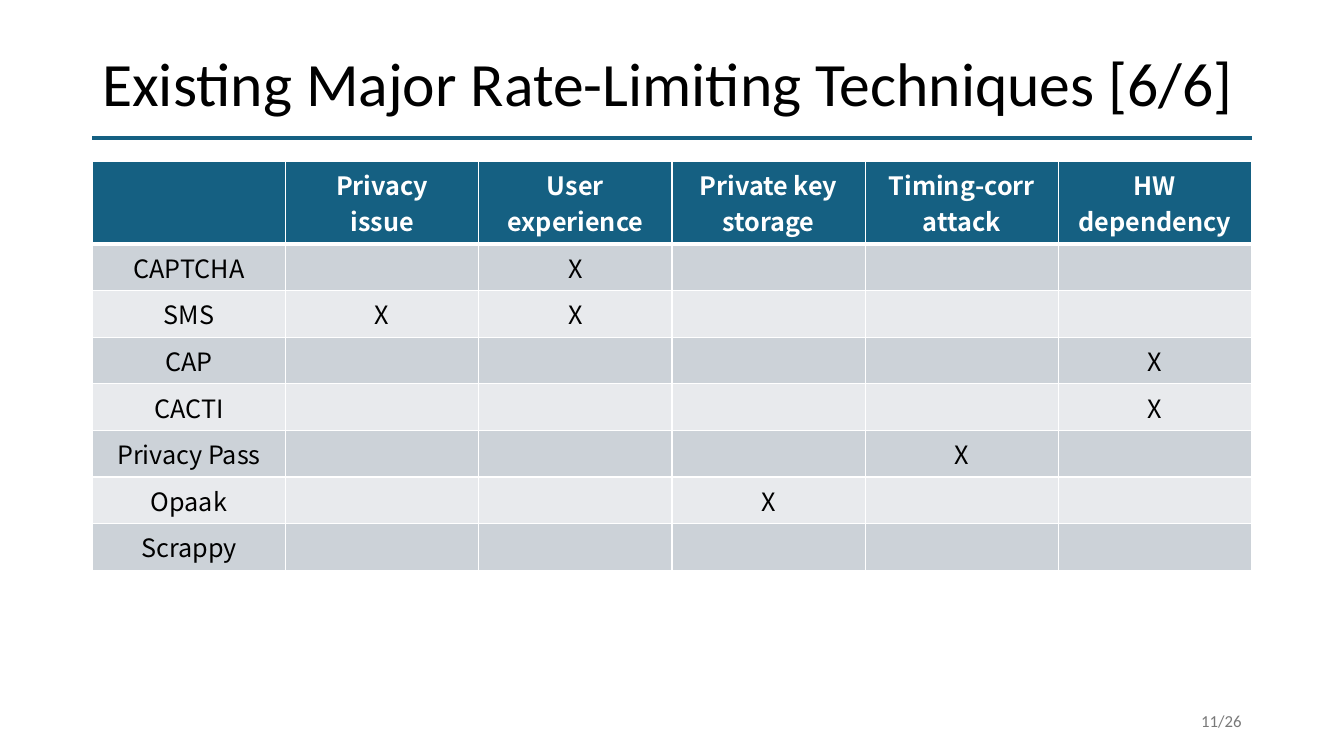
from dataclasses import dataclass
from lxml.etree import SubElement as Sub
from pptx import Presentation
from pptx.dml.color import RGBColor as Rgb
from pptx.enum.shapes import MSO_CONNECTOR as Conn
from pptx.enum.text import MSO_ANCHOR as Anchor, PP_ALIGN as Align
from pptx.oxml.ns import qn
from pptx.util import Pt


@dataclass
class Theme:
    """Colours, fonts and type sizes of the slide."""
    blue: str = "156082"
    dark: str = "CCD2D8"
    pale: str = "E8EAED"
    white: str = "FFFFFF"
    black: str = "000000"
    grey: str = "797979"
    sans: str = "Calibri"
    grid: str = "Noto Sans CJK KR"
    title: int = 44
    body: int = 18
    foot: int = 12


class Deck:
    """Holds the style and the current slide, and draws on it."""

    def __init__(self, theme):
        """Open a wide deck with one blank slide."""
        self.theme = theme
        self.prs = Presentation()
        self.prs.slide_width, self.prs.slide_height = Pt(960), Pt(540)
        self.slide = self.prs.slides.add_slide(self.prs.slide_layouts[6])

    def style(self, para, font, color, align):
        """Apply font values, colour and alignment to a paragraph."""
        para.alignment = align
        for key, val in font.items():
            setattr(para.font, key, val)
        para.font.color.rgb = Rgb.from_string(color)

    def text(self, text, box, size, color, align, space=1.0):
        """Add one line of text, centred in height."""
        frame = self.slide.shapes.add_textbox(*map(Pt, box)).text_frame
        form = {"word_wrap": True, "vertical_anchor": Anchor.MIDDLE, "text": text}
        for key, val in form.items():
            setattr(frame, key, val)
        para = frame.paragraphs[0]
        para.line_spacing = space
        self.style(para, {"name": self.theme.sans, "size": Pt(size)}, color, align)

    def rule(self, left, top, width):
        """Add a level line with no shadow."""
        ends = map(Pt, (left, top, left + width, top))
        line = self.slide.shapes.add_connector(Conn.STRAIGHT, *ends)
        line.line.color.rgb = Rgb.from_string(self.theme.blue)
        line.line.width = Pt(3)
        Sub(line._element.spPr, qn("a:effectLst"))

    def edge(self, cell, row):
        """Draw white borders, thick below the head row."""
        props = cell._tc.get_or_add_tcPr()
        for side in "LRTB":
            wide = 3 if (row, side) in ((0, "B"), (1, "T")) else 1
            line = Sub(props, qn(f"a:ln{side}"), w=str(Pt(wide)))
            fill = Sub(line, qn("a:solidFill"))
            Sub(fill, qn("a:srgbClr"), val=self.theme.white)

    def table(self, rows, spot, width, top, high):
        """Add a banded table with a taller, bold head row."""
        look = self.theme
        size = len(rows), len(rows[0])
        box = *spot, width, top + high * (len(rows) - 1)
        grid = self.slide.shapes.add_table(*size, *map(Pt, box)).table
        for r, row in enumerate(rows):
            head = r == 0
            grid.rows[r].height = Pt(top if head else high)
            band = look.blue if head else (look.pale, look.dark)[r % 2]
            ink = look.white if head else look.black
            font = {"name": look.grid, "size": Pt(look.body), "bold": head}
            for c, text in enumerate(row):
                cell = grid.cell(r, c)
                cell.text = text
                self.edge(cell, r)
                cell.fill.solid()
                cell.fill.fore_color.rgb = Rgb.from_string(band)
                for para in cell.text_frame.paragraphs:
                    self.style(para, font, ink, Align.CENTER)


def main():
    """Build the slide and save it."""
    look = Theme()
    deck = Deck(look)
    left, width = 66, 828
    deck.rule(left, 98.6, width)
    deck.text("Existing Major Rate-Limiting Techniques [6/6]",
              (left, 28.3, width, 67), look.title, look.black, Align.LEFT, 0.9)
    heads = ["", "Privacy\nissue", "User experience", "Private key storage",
             "Timing-corr\nattack", "HW dependency"]
    marks = {"CAPTCHA": [2], "SMS": [1, 2], "CAP": [5], "CACTI": [5],
             "Privacy Pass": [4], "Opaak": [3], "Scrappy": []}
    rows = [heads]
    for name, hits in marks.items():
        rows.append([name] + ["X" if c in hits else "" for c in range(1, len(heads))])
    deck.table(rows, (left, 115), width, 59.3, 33.3)
    deck.text("11/26", (678, 500.5, 216, 28.8), look.foot, look.grey, Align.RIGHT)
    deck.prs.save("out.pptx")


if __name__ == "__main__":
    main()
